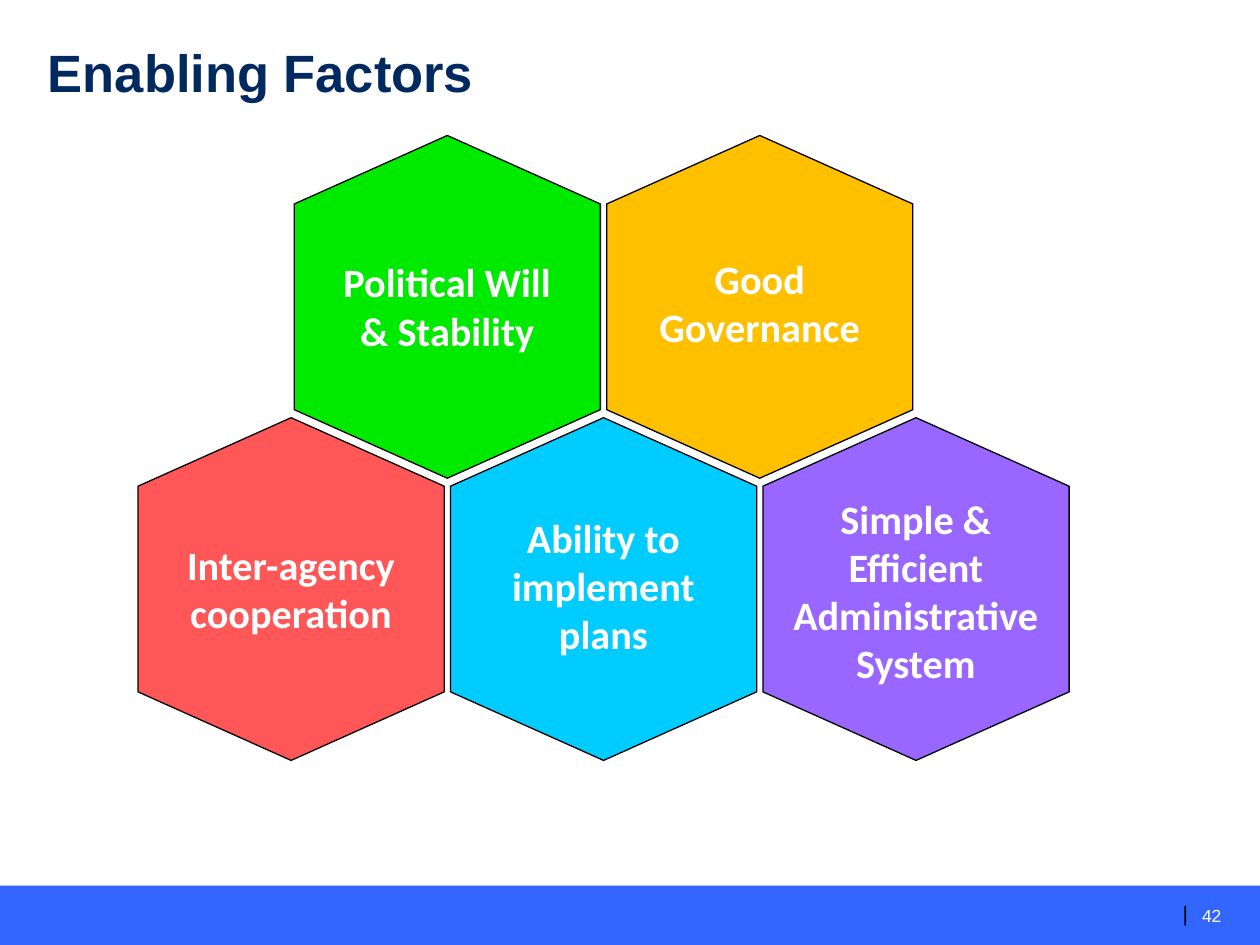
"""Build the Enabling Factors slide with five honeycomb cells."""
from dataclasses import dataclass

from pptx import Presentation, util as u
from pptx.dml.color import RGBColor
from pptx.enum import shapes, text


@dataclass(frozen=True)
class Theme:
    heading_font: str = "Arial"
    label_font: str = "Calibri"
    heading: str = "002960"
    light: str = "FFFFFF"
    dark: str = "000000"
    band: str = "3366FF"
    title_size: float = 30
    label_size: float = 23
    divider_size: float = 12
    number_size: float = 10
    outline: float = 0.75


@dataclass(frozen=True)
class Grid:
    left: float = 2.31
    top: float = 2.435
    column: float = 1.24
    row: float = 2.24
    cell_length: float = 2.72
    cell_width: float = 2.43
    line: float = 0.385
    padding: float = 0.11


@dataclass(frozen=True)
class Factor:
    label: str
    column: int
    row: int
    colour: str
    lines: int = 2
    width: float = 1.92
    drop: float = 0


@dataclass(frozen=True)
class Box:
    left: float
    top: float
    width: float
    height: float

    def inches(self) -> tuple:
        return tuple(u.Inches(side) for side in (self.left, self.top, self.width, self.height))


THEME = Theme()
GRID = Grid()
WIDTH, HEIGHT = 10, 7.5
BAND_TOP = 7.03
FACTORS = (
    Factor("Political Will & Stability", 1, 0, "00EA00"),
    Factor("Good Governance", 3, 0, "FFC000", width=2.17, drop=-0.03),
    Factor("Inter-agency cooperation", 0, 1, "FF5757"),
    Factor("Ability to implement plans", 2, 1, "00CCFF", lines=3, drop=-0.02),
    Factor("Simple & Efficient Administrative System", 4, 1, "9966FF", lines=4, width=2.43, drop=0.02),
)


def centred(x: float, y: float, width: float, height: float) -> Box:
    """Return the box with its middle at the given point."""
    return Box(x - width / 2, y - height / 2, width, height)


def write(shape, words: str, font: str, size: float, colour: str, bold: bool = False,
          align=text.PP_ALIGN.LEFT, anchor=text.MSO_ANCHOR.TOP, inset: bool = False, wrap: bool = True) -> None:
    """Fill a shape with one formatted paragraph."""
    frame = shape.text_frame
    frame.text = words
    frame.word_wrap = wrap
    frame.auto_size = text.MSO_AUTO_SIZE.NONE
    frame.vertical_anchor = anchor
    if not inset:
        frame.margin_left = frame.margin_right = frame.margin_top = frame.margin_bottom = 0
    paragraph = frame.paragraphs[0]
    paragraph.alignment = align
    run_font = paragraph.runs[0].font
    run_font.name, run_font.size, run_font.bold = font, u.Pt(size), bold
    run_font.color.rgb = RGBColor.from_string(colour)


def add_filled(slide, kind, box: Box, colour: str):
    """Add a flat preset shape without an outline."""
    shape = slide.shapes.add_shape(kind, *box.inches())
    shape.shadow.inherit = False
    shape.fill.solid()
    shape.fill.fore_color.rgb = RGBColor.from_string(colour)
    shape.line.fill.background()
    return shape


def add_title(slide, words: str) -> None:
    """Place and format the title placeholder."""
    title = slide.shapes.title
    title.left, title.top, title.width, title.height = Box(0.38, 0.32, 6.86, 0.5).inches()
    write(title, words, THEME.heading_font, THEME.title_size, THEME.heading, bold=True)


def add_footer(slide, number: str) -> None:
    """Draw the bottom band with its divider and page number."""
    band = Box(0, BAND_TOP, WIDTH, HEIGHT - BAND_TOP)
    add_filled(slide, shapes.MSO_SHAPE.RECTANGLE, band, THEME.band)
    divider = slide.shapes.add_textbox(*Box(9.39, 7.14, 0.04, 0.21).inches())
    write(divider, "|", THEME.heading_font, THEME.divider_size, THEME.dark,
          align=text.PP_ALIGN.RIGHT, anchor=text.MSO_ANCHOR.MIDDLE, wrap=False)
    page = slide.shapes.add_textbox(*Box(9.54, 7.18, 0.22, 0.17).inches())
    write(page, number, THEME.heading_font, THEME.number_size, THEME.light, wrap=False)


def add_factor(slide, factor: Factor) -> None:
    """Draw one upright hexagon and its label."""
    x = GRID.left + factor.column * GRID.column
    y = GRID.top + factor.row * GRID.row
    box = centred(x, y, GRID.cell_length, GRID.cell_width)
    hexagon = add_filled(slide, shapes.MSO_SHAPE.FLOWCHART_PREPARATION, box, factor.colour)
    hexagon.rotation = 90
    hexagon.line.color.rgb = RGBColor.from_string(THEME.dark)
    hexagon.line.width = u.Pt(THEME.outline)
    height = factor.lines * GRID.line + GRID.padding
    label = slide.shapes.add_textbox(*centred(x, y + factor.drop, factor.width, height).inches())
    write(label, factor.label, THEME.label_font, THEME.label_size, THEME.light, bold=True,
          align=text.PP_ALIGN.CENTER, inset=True)


def main() -> None:
    """Assemble and save the presentation."""
    presentation = Presentation()
    presentation.slide_width, presentation.slide_height = u.Inches(WIDTH), u.Inches(HEIGHT)
    slide = presentation.slides.add_slide(presentation.slide_layouts[5])
    add_footer(slide, "42")
    add_title(slide, "Enabling Factors")
    for factor in FACTORS:
        add_factor(slide, factor)
    presentation.save("out.pptx")


if __name__ == "__main__":
    main()
